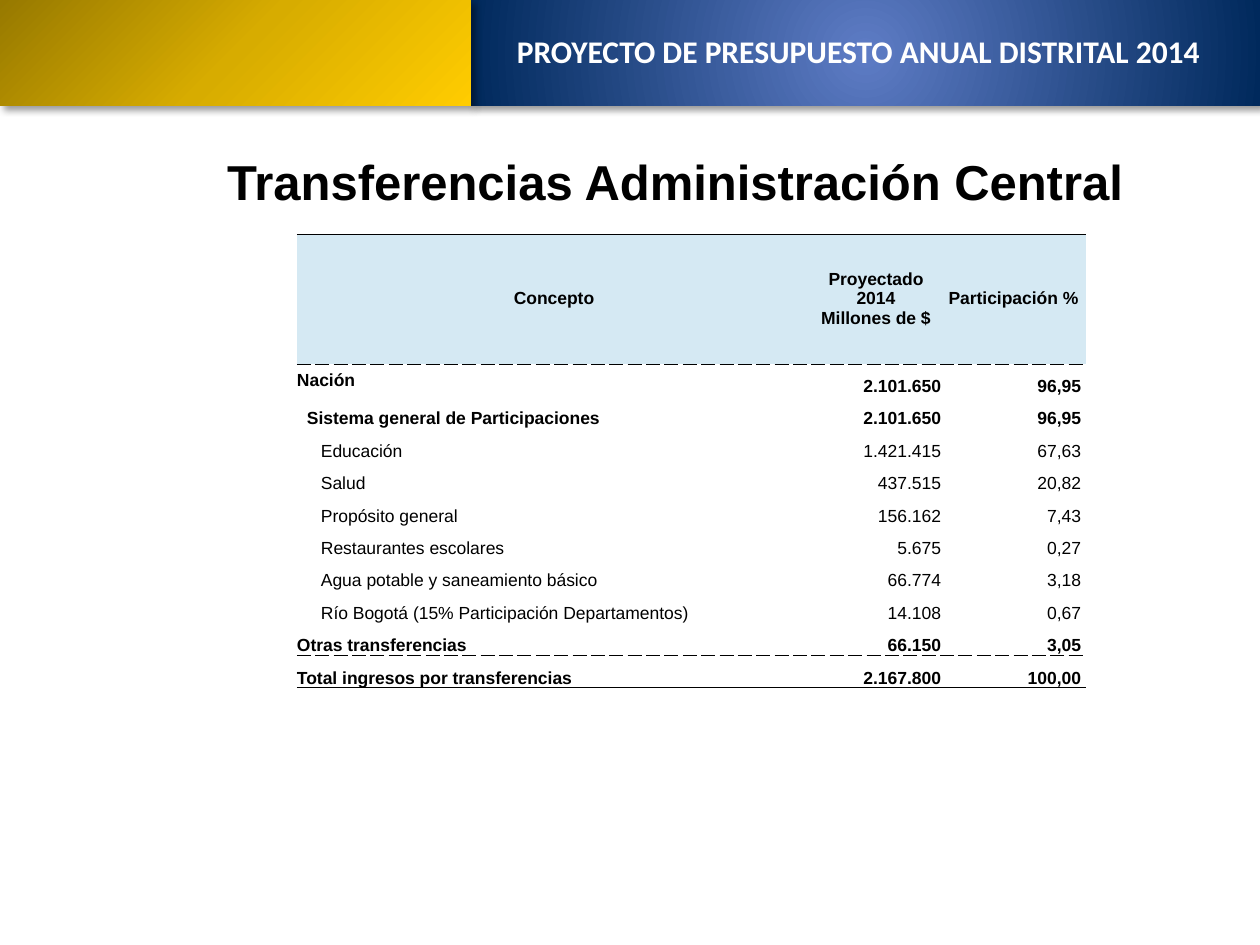
import pptx
import pptx.dml.color
import pptx.enum.shapes
import pptx.enum.text
import pptx.oxml
import pptx.oxml.ns
import pptx.util

ALIGN = pptx.enum.text.PP_ALIGN
ANCHOR = pptx.enum.text.MSO_ANCHOR
NAMESPACE = pptx.oxml.ns.nsdecls("a")
HEADINGS = [["Concepto"], ["Proyectado 2014", "Millones de $"], ["Participación %"]]
ROWS = [
    ("Nación", "2.101.650", "96,95", 0, True),
    ("Sistema general de Participaciones", "2.101.650", "96,95", 10, True),
    ("Educación", "1.421.415", "67,63", 24, False),
    ("Salud", "437.515", "20,82", 24, False),
    ("Propósito general", "156.162", "7,43", 24, False),
    ("Restaurantes escolares", "5.675", "0,27", 24, False),
    ("Agua potable y saneamiento básico", "66.774", "3,18", 24, False),
    ("Río Bogotá (15% Participación Departamentos)", "14.108", "0,67", 24, False),
    ("Otras transferencias", "66.150", "3,05", 0, True),
    ("Total ingresos por transferencias", "2.167.800", "100,00", 0, True),
]


def px(length):
    """Turn pixels into EMU."""
    return pptx.util.Emu(round(length * 914400 / 126))


def color(value):
    """Turn a hex string into a colour."""
    return pptx.dml.color.RGBColor.from_string(value)


def write(frame, lines, size, font="Arial", value="000000", bold=True, align=ALIGN.CENTER):
    """Write one paragraph per line into a text frame."""
    frame.word_wrap = True
    for index, line in enumerate(lines):
        paragraph = frame.add_paragraph() if index else frame.paragraphs[0]
        paragraph.alignment = align
        run = paragraph.add_run()
        run.text = line
        run.font.size = pptx.util.Pt(size)
        run.font.name = font
        run.font.bold = bold
        run.font.color.rgb = color(value)


def add_panel(slide, box, stops, focus):
    """Add a shadowed rectangle with a circular gradient around a focus."""
    shape = slide.shapes.add_shape(
        pptx.enum.shapes.MSO_SHAPE.RECTANGLE, *map(px, box))
    shape.line.fill.background()
    stop_xml = "".join(
        f'<a:gs pos="{position * 1000}"><a:srgbClr val="{value}"/></a:gs>'
        for position, value in stops)
    left, top, right, bottom = (edge * 1000 for edge in focus)
    gradient = pptx.oxml.parse_xml(
        f'<a:gradFill {NAMESPACE} rotWithShape="1"><a:gsLst>{stop_xml}</a:gsLst>'
        f'<a:path path="circle"><a:fillToRect l="{left}" t="{top}" r="{right}" '
        f'b="{bottom}"/></a:path></a:gradFill>')
    shadow = pptx.oxml.parse_xml(
        f'<a:effectLst {NAMESPACE}><a:outerShdw blurRad="50800" dist="38100" '
        'dir="2700000" algn="tl" rotWithShape="0"><a:srgbClr val="000000">'
        '<a:alpha val="40000"/></a:srgbClr></a:outerShdw></a:effectLst>')
    properties = shape.element.spPr
    properties.find(pptx.oxml.ns.qn("a:prstGeom")).addnext(gradient)
    properties.append(shadow)


def add_banner(slide, left, top, width, height):
    """Add the two-colour banner and its heading."""
    split = 471
    add_panel(slide, (left + split, top, width - split, height),
              [(0, "5E7CC5"), (100, "00295C")], (50, 50, 50, 50))
    add_panel(slide, (left, top, split, height),
              [(0, "977900"), (50, "D7AC00"), (100, "FFCC00")], (0, 0, 100, 100))
    heading = slide.shapes.add_textbox(
        px(left + split + 20), px(top + 26), px(735), px(58))
    write(heading.text_frame, ["PROYECTO DE PRESUPUESTO ANUAL DISTRITAL 2014"],
          18, "Calibri", "FFFFFF")


def add_title(slide, left, top, width, height):
    """Place and write the slide title."""
    title = slide.shapes.title
    title.left, title.top, title.width, title.height = map(px, (left, top, width, height))
    title.text_frame.vertical_anchor = ANCHOR.TOP
    write(title.text_frame, ["Transferencias Administración Central"], 28)


def format_cell(cell, fill, top, bottom, anchor=ANCHOR.BOTTOM, left=0, right=0):
    """Set the fill, borders, anchor and side margins of a cell."""
    cell.margin_left, cell.margin_right = px(left), px(right)
    cell.margin_top = cell.margin_bottom = 0
    cell.vertical_anchor = anchor
    cell.fill.solid()
    cell.fill.fore_color.rgb = color(fill)
    properties = cell._tc.get_or_add_tcPr()
    sides = [("lnL", None), ("lnR", None), ("lnT", top), ("lnB", bottom)]
    for index, (side, dash) in enumerate(sides):
        line = (f'<a:solidFill><a:srgbClr val="000000"/></a:solidFill>'
                f'<a:prstDash val="{dash}"/>' if dash else "<a:noFill/>")
        properties.insert(index, pptx.oxml.parse_xml(
            f'<a:{side} {NAMESPACE} w="6350">{line}</a:{side}>'))


def add_transfers_table(slide, left, top, width, height):
    """Add the table of transfers by concept."""
    header_height = 130
    columns = [514, 130, width - 644]
    table = slide.shapes.add_table(
        len(ROWS) + 1, len(columns), *map(px, (left, top, width, height))).table
    table.first_row = table.horz_banding = False
    for column, column_width in zip(table.columns, columns):
        column.width = px(column_width)
    for index, row in enumerate(table.rows):
        row.height = px((height - header_height) / len(ROWS) if index else header_height)
    for column, lines in enumerate(HEADINGS):
        cell = table.cell(0, column)
        format_cell(cell, "D5E9F3", "solid", "dash", ANCHOR.MIDDLE)
        write(cell.text_frame, lines, 10)
    borders = {1: ("dash", None), len(ROWS) - 1: (None, "dash"), len(ROWS): ("dash", "solid")}
    for index, (*texts, indent, bold) in enumerate(ROWS, 1):
        for column, text in enumerate(texts):
            cell = table.cell(index, column)
            middle = index == 1 and column == 0
            format_cell(cell, "FFFFFF", *borders.get(index, (None, None)),
                        anchor=ANCHOR.MIDDLE if middle else ANCHOR.BOTTOM,
                        left=0 if column else indent, right=5 if column == 2 else 0)
            write(cell.text_frame, [text], 10, bold=bold,
                  align=ALIGN.RIGHT if column else ALIGN.LEFT)


def main():
    """Build the slide and save it."""
    presentation = pptx.Presentation()
    presentation.slide_width, presentation.slide_height = px(1260), px(945)
    slide = presentation.slides.add_slide(presentation.slide_layouts[5])
    add_banner(slide, 0, 0, 1260, 106)
    add_title(slide, 174, 145, 1002, 131)
    add_transfers_table(slide, 297, 234, 789, 454)
    presentation.save("out.pptx")


if __name__ == "__main__":
    main()
